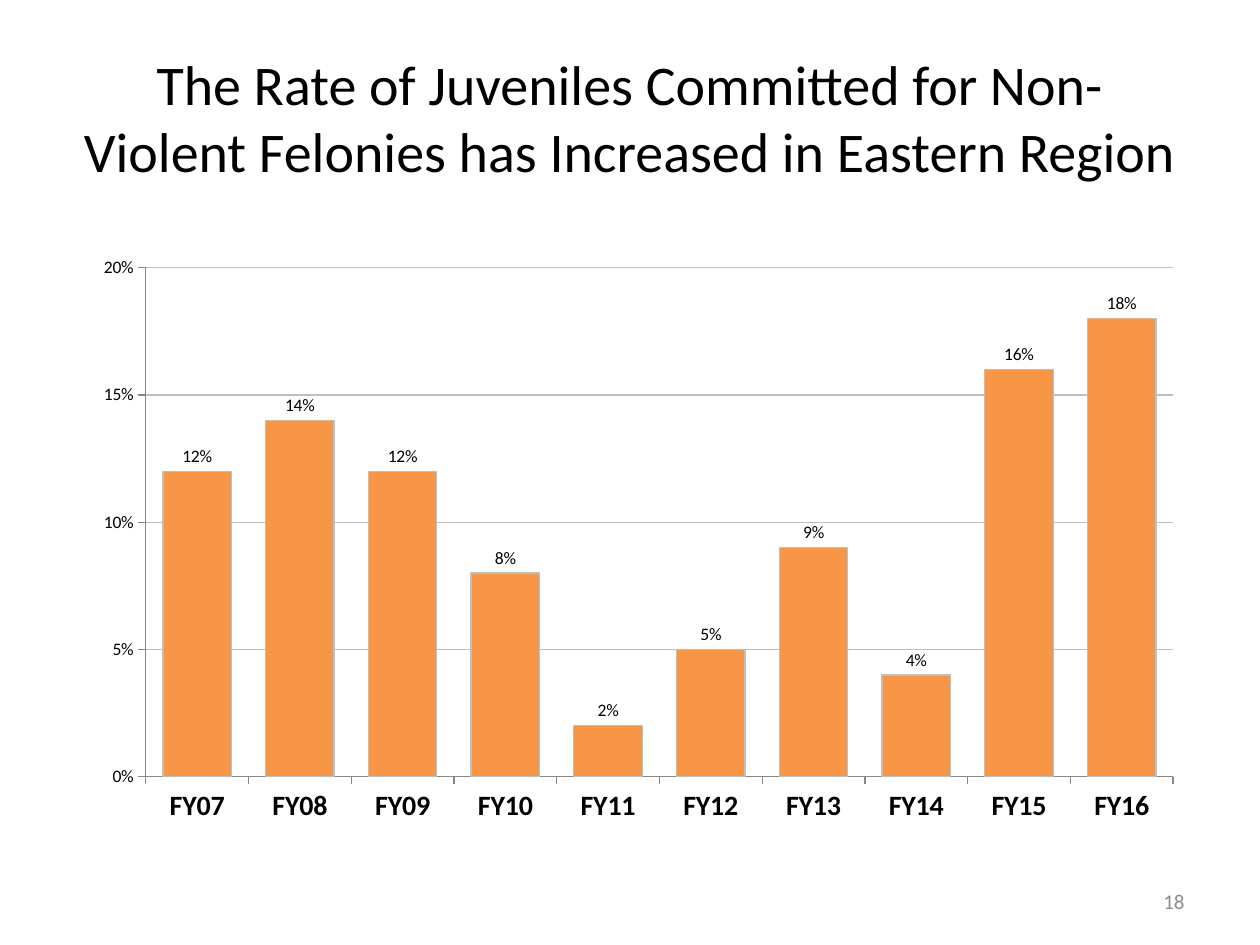
from dataclasses import dataclass

from lxml import etree
from pptx import Presentation
from pptx.chart.data import CategoryChartData
from pptx.dml.color import RGBColor
from pptx.enum.chart import XL_CHART_TYPE, XL_LABEL_POSITION, XL_TICK_MARK
from pptx.enum.text import MSO_ANCHOR, PP_ALIGN
from pptx.oxml.ns import qn
from pptx.util import Inches, Pt

COLUMN = XL_CHART_TYPE.COLUMN_CLUSTERED
OUTSIDE_END = XL_LABEL_POSITION.OUTSIDE_END
TICK_OUT, TICK_NONE = XL_TICK_MARK.OUTSIDE, XL_TICK_MARK.NONE
MIDDLE = MSO_ANCHOR.MIDDLE
CENTER, RIGHT = PP_ALIGN.CENTER, PP_ALIGN.RIGHT

HEADLINE = "The Rate of Juveniles Committed for Non-Violent Felonies has Increased in Eastern Region"
PAGE_NUMBER = "18"
RATES = {
    "FY07": 0.12,
    "FY08": 0.14,
    "FY09": 0.12,
    "FY10": 0.08,
    "FY11": 0.02,
    "FY12": 0.05,
    "FY13": 0.09,
    "FY14": 0.04,
    "FY15": 0.16,
    "FY16": 0.18,
}
PLOT_AREA = {"x": 0.073, "y": 0.076, "w": 0.906, "h": 0.816}


@dataclass(frozen=True)
class Theme:
    font: str = "Calibri"
    ink: str = "000000"
    muted: str = "8C8C8C"
    bar: str = "F79646"
    grid: str = "BFBFBF"
    axis: str = "868686"
    headline_size: int = 32
    year_size: int = 16
    number_size: int = 12
    label_size: int = 10
    hairline: float = 0.75


THEME = Theme()
MARGIN = 0.5
CONTENT_WIDTH = 9


def style_font(font, size, color=THEME.ink, bold=False):
    font.name = THEME.font
    font.size = Pt(size)
    font.bold = bold
    font.color.rgb = RGBColor.from_string(color)


def style_line(line, color):
    line.color.rgb = RGBColor.from_string(color)
    line.width = Pt(THEME.hairline)


def add_text(slide, text, left, top, width, height, *, size, color=THEME.ink, align=CENTER):
    frame = slide.shapes.add_textbox(
        Inches(left), Inches(top), Inches(width), Inches(height)
    ).text_frame
    frame.word_wrap = True
    frame.vertical_anchor = MIDDLE
    paragraph = frame.paragraphs[0]
    paragraph.alignment = align
    run = paragraph.add_run()
    run.text = text
    style_font(run.font, size, color)


def place_plot_area(chart):
    plot_area = chart.plots[0]._element.getparent()
    for old_layout in plot_area.findall(qn("c:layout")):
        plot_area.remove(old_layout)
    layout = etree.Element(qn("c:layout"))
    manual = etree.SubElement(layout, qn("c:manualLayout"))
    settings = {"layoutTarget": "inner", "xMode": "edge", "yMode": "edge", **PLOT_AREA}
    for name, value in settings.items():
        etree.SubElement(manual, qn(f"c:{name}")).set("val", str(value))
    plot_area.insert(0, layout)


def add_rate_chart(slide):
    rates = CategoryChartData(number_format="0%")
    rates.categories = list(RATES)
    rates.add_series("Series 1", list(RATES.values()))
    chart = slide.shapes.add_chart(
        COLUMN, Inches(MARGIN), Inches(1.75), Inches(CONTENT_WIDTH), Inches(4.95), rates
    ).chart
    chart.has_legend = False
    chart.has_title = False
    style_font(chart.font, THEME.label_size)
    place_plot_area(chart)

    plot = chart.plots[0]
    plot.gap_width = 50
    plot.vary_by_categories = False
    bars = plot.series[0]
    bars.format.fill.solid()
    bars.format.fill.fore_color.rgb = RGBColor.from_string(THEME.bar)
    style_line(bars.format.line, THEME.grid)

    labels = bars.data_labels
    labels.show_value = True
    labels.number_format = "0%"
    labels.number_format_is_linked = False
    labels.position = OUTSIDE_END
    style_font(labels.font, THEME.label_size)

    for axis in (chart.category_axis, chart.value_axis):
        axis.major_tick_mark = TICK_OUT
        axis.minor_tick_mark = TICK_NONE
        style_line(axis.format.line, THEME.axis)
    style_font(chart.category_axis.tick_labels.font, THEME.year_size, bold=True)

    scale = chart.value_axis
    scale.minimum_scale, scale.maximum_scale, scale.major_unit = 0, 0.2, 0.05
    scale.has_major_gridlines = True
    style_line(scale.major_gridlines.format.line, THEME.grid)
    scale.tick_labels.number_format = "0%"
    scale.tick_labels.number_format_is_linked = False
    style_font(scale.tick_labels.font, THEME.label_size)


def main():
    deck = Presentation()
    deck.slide_width, deck.slide_height = Inches(10), Inches(7.5)
    slide = deck.slides.add_slide(deck.slide_layouts[6])
    add_text(slide, HEADLINE, MARGIN, 0.3, CONTENT_WIDTH, 1.25, size=THEME.headline_size)
    add_rate_chart(slide)
    add_text(slide, PAGE_NUMBER, 7.17, 6.95, 2.33, 0.4,
             size=THEME.number_size, color=THEME.muted, align=RIGHT)
    deck.save("out.pptx")


if __name__ == "__main__":
    main()
